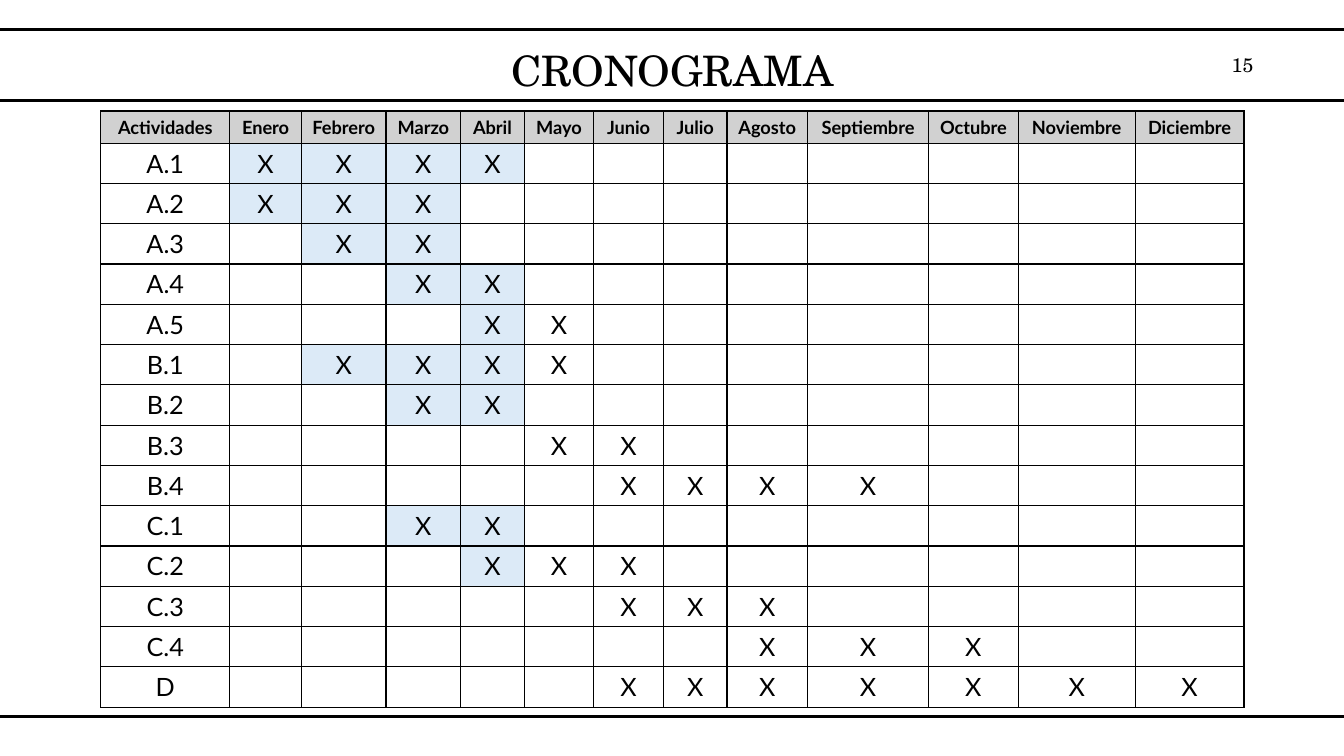
from lxml.etree import SubElement as Sub
from pptx import Presentation
from pptx.dml.color import RGBColor
from pptx.enum.shapes import MSO_SHAPE as Shape
from pptx.enum.text import MSO_ANCHOR as Anchor, PP_ALIGN as Align
from pptx.oxml.ns import qn
from pptx.util import Inches, Pt

MONTHS = ["Enero", "Febrero", "Marzo", "Abril", "Mayo", "Junio", "Julio",
          "Agosto", "Septiembre", "Octubre", "Noviembre", "Diciembre"]
# Activity: first and last month
PLAN = {
    "A.1": (1, 4), "A.2": (1, 3), "A.3": (2, 3), "A.4": (3, 4), "A.5": (4, 5),
    "B.1": (2, 5), "B.2": (3, 4), "B.3": (5, 6), "B.4": (6, 9),
    "C.1": (3, 4), "C.2": (4, 6), "C.3": (6, 8), "C.4": (8, 10),
    "D": (6, 12),
}
DONE = 4  # months up to this one are shaded
WIDTHS = [9.6, 5.33, 6.3, 5.55, 4.73, 5.18, 5.18, 4.73, 6, 9, 6.68, 8.7, 8.1]
HEAD, ROW = 4.27, 5.33


def color(code):
    return RGBColor.from_string(code)


class Page:
    """One slide; lengths are percentages of its width and height."""
    ink, gray, blue = "000000", "D1D1D1", "DCEAF7"
    serif, sans = "TeX Gyre Schola", "Lato"

    def __init__(self, deck):
        self.deck = deck
        self.slide = deck.slides.add_slide(deck.slide_layouts[6])

    def wide(self, share):
        return round(self.deck.slide_width * share / 100)

    def high(self, share):
        return round(self.deck.slide_height * share / 100)

    def box(self, x, y, w, h):
        return self.wide(x), self.high(y), self.wide(w), self.high(h)

    def words(self, para, text, size, font, align=Align.CENTER, bold=False):
        para.alignment = align
        run = para.add_run()
        run.text = text
        run.font.size, run.font.name, run.font.bold = Pt(size), font, bold
        run.font.color.rgb = color(self.ink)

    def band(self, y, h):
        """Outlined strip that runs past both sides of the slide."""
        strip = self.slide.shapes.add_shape(
            Shape.RECTANGLE, *self.box(-1.28, y, 102.55, h))
        strip.shadow.inherit = False
        strip.fill.background()
        strip.line.color.rgb = color(self.ink)
        strip.line.width = Pt(2.25)

    def label(self, place, text, size, align, space=1.0):
        frame = self.slide.shapes.add_textbox(*self.box(*place)).text_frame
        frame.word_wrap = True
        frame.margin_left = 0 if align == Align.RIGHT else Inches(0.1)
        frame.vertical_anchor = Anchor.MIDDLE
        para = frame.paragraphs[0]
        para.line_spacing = space
        self.words(para, text, size, self.serif, align)

    def cell(self, cell, text, size, fill=None, bold=False):
        cell.margin_left = cell.margin_right = Inches(0.05)
        cell.margin_top = cell.margin_bottom = Inches(0.02)
        cell.vertical_anchor = Anchor.MIDDLE
        if text:
            self.words(cell.text_frame.paragraphs[0], text, size, self.sans,
                       bold=bold)
        self.border(cell)
        if fill:
            cell.fill.solid()
            cell.fill.fore_color.rgb = color(fill)
        else:
            cell.fill.background()

    def border(self, cell):
        props = cell._tc.get_or_add_tcPr()
        for side in ("a:lnL", "a:lnR", "a:lnT", "a:lnB"):
            line = Sub(props, qn(side), w=str(Pt(1)))
            Sub(Sub(line, qn("a:solidFill")), qn("a:srgbClr"), val=self.ink)

    def chart(self, x, y):
        """Table of activities by month, with an X in each planned month."""
        count = len(PLAN)
        grid = self.slide.shapes.add_table(
            count + 1, len(WIDTHS),
            *self.box(x, y, sum(WIDTHS), HEAD + ROW * count)).table
        grid.first_row = grid.horz_banding = False
        for col, width in zip(grid.columns, WIDTHS):
            col.width = self.wide(width)
        for row, height in zip(grid.rows, [HEAD] + [ROW] * count):
            row.height = self.high(height)
        for col, name in enumerate(["Actividades"] + MONTHS):
            self.cell(grid.cell(0, col), name, 13, self.gray, True)
        for row, (task, (first, last)) in enumerate(PLAN.items(), 1):
            self.cell(grid.cell(row, 0), task, 18)
            for month in range(1, len(MONTHS) + 1):
                busy = first <= month <= last
                self.cell(grid.cell(row, month), "X" if busy else "", 18,
                          self.blue if busy and month <= DONE else None)


def main():
    deck = Presentation()
    deck.slide_width, deck.slide_height = Inches(13.33), Inches(7.5)
    page = Page(deck)
    page.band(3.87, 9.47)
    page.label((15.23, 3.87, 69.62, 11.6), "CRONOGRAMA", 30, Align.CENTER, 0.9)
    page.label((90.85, 5.87, 3.15, 5.33), "15", 14, Align.RIGHT)
    page.band(94.8, 6.8)
    page.chart(7.5, 14.67)
    deck.save("out.pptx")


if __name__ == "__main__":
    main()
